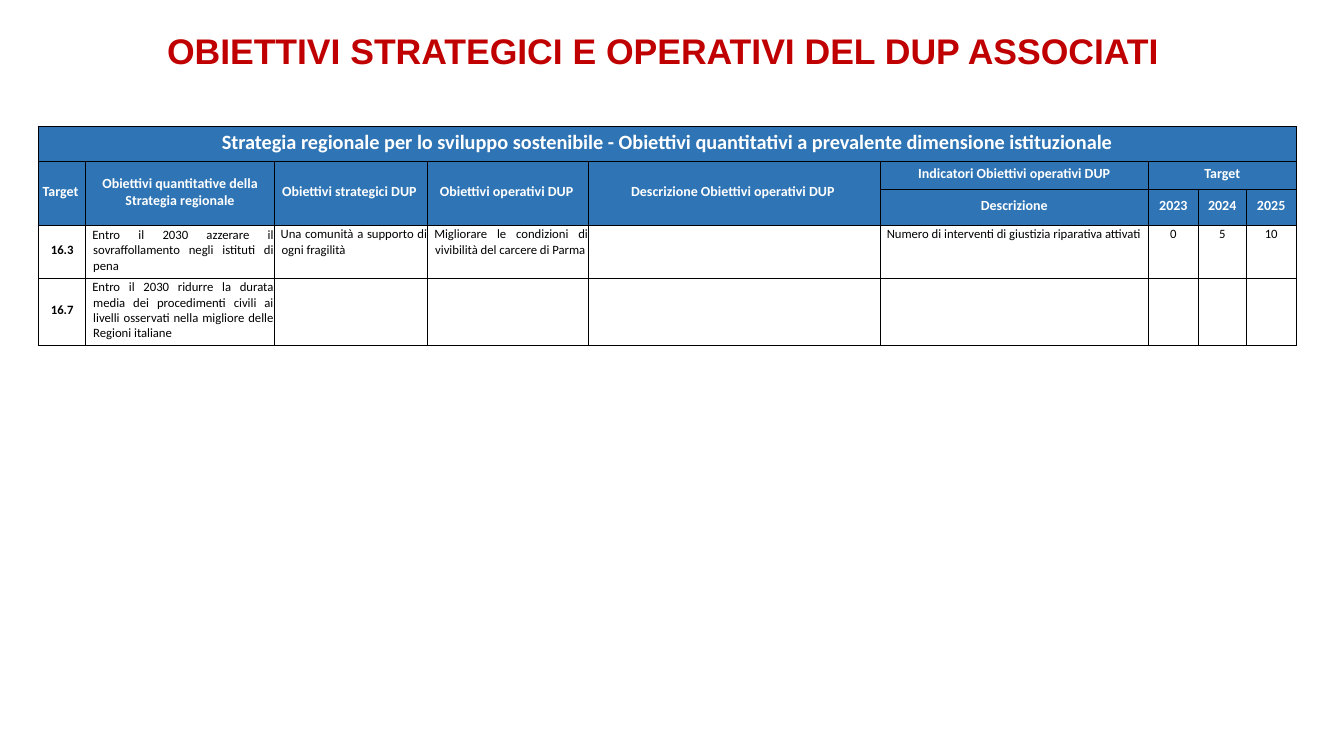
from lxml import etree
from pptx import Presentation
from pptx.dml.color import RGBColor
from pptx.enum.text import MSO_ANCHOR, PP_ALIGN
from pptx.oxml.ns import qn
from pptx.util import Inches, Pt

CENTER, JUSTIFY = PP_ALIGN.CENTER, PP_ALIGN.JUSTIFY
TOP, MIDDLE = MSO_ANCHOR.TOP, MSO_ANCHOR.MIDDLE
RED, BLUE, WHITE, BLACK = "C00000", "2F75B5", "FFFFFF", "000000"

HEADING = "OBIETTIVI STRATEGICI E OPERATIVI DEL DUP ASSOCIATI"
GOALS = [
    ["Strategia regionale per lo sviluppo sostenibile - Obiettivi quantitativi "
     "a prevalente dimensione istituzionale", "", "", "", "", "", "", "", ""],
    ["Target ", "Obiettivi quantitative della Strategia regionale",
     "Obiettivi strategici DUP ", "Obiettivi operativi DUP ",
     "Descrizione Obiettivi operativi DUP ", "Indicatori Obiettivi operativi DUP",
     "Target", "", ""],
    ["", "", "", "", "", "Descrizione", "2023", "2024", "2025"],
    ["16.3", "Entro il 2030 azzerare il sovraffollamento negli istituti di pena ",
     "Una comunità a supporto di ogni fragilità",
     "Migliorare le condizioni di vivibilità del carcere di Parma", "",
     "Numero di interventi di giustizia riparativa attivati", "0", "5", "10"],
    ["16.7", "Entro il 2030 ridurre la durata media dei procedimenti civili ai livelli "
     "osservati nella migliore delle Regioni italiane", "", "", "", "", "", "", ""],
]
HEADER_ROWS = 3
FIRST_YEAR = 6
COLUMN_WIDTHS = [0.52, 2.06, 1.68, 1.76, 3.19, 2.93, 0.55, 0.52, 0.55]
ROW_HEIGHTS = [0.39, 0.3, 0.4, 0.58, 0.73]
MERGES = [(0, 0, 0, 8), (1, 6, 1, 8)] + [(1, col, 2, col) for col in range(5)]


def color(value):
    return RGBColor.from_string(value)


def style_font(font, name, size, shade, bold):
    font.name, font.size, font.bold = name, Pt(size), bold
    font.color.rgb = color(shade)


def add_borders(cell):
    properties = cell._tc.get_or_add_tcPr()
    for side in ("a:lnL", "a:lnR", "a:lnT", "a:lnB"):
        line = etree.SubElement(properties, qn(side), w=str(Pt(1)))
        fill = etree.SubElement(line, qn("a:solidFill"))
        etree.SubElement(fill, qn("a:srgbClr"), val=BLACK)


def format_cell(cell, row, col, wording):
    header = row < HEADER_ROWS
    add_borders(cell)
    cell.margin_left = cell.margin_right = cell.margin_top = Inches(0.01)
    cell.margin_bottom = Inches(0.05)
    cell.vertical_anchor = MIDDLE if header or col < 2 else TOP
    if header:
        cell.fill.solid()
        cell.fill.fore_color.rgb = color(BLUE)
    else:
        cell.fill.background()
    cell.text_frame.text = wording
    paragraph = cell.text_frame.paragraphs[0]
    size = 16 if row == 0 else 11 if header else 10
    if header or col == 0 or col >= FIRST_YEAR:
        paragraph.alignment = CENTER
    else:
        paragraph.alignment = JUSTIFY
        indents = paragraph._p.get_or_add_pPr()
        indents.set("marL", str(Inches(0.07)))
        indents.set("indent", str(Inches(-0.01)))
    paragraph.font.size = Pt(size)
    for run in paragraph.runs:
        style_font(run.font, "Calibri", size, WHITE if header else BLACK, header or col == 0)


def add_heading(slide):
    title = slide.shapes.title
    title.left, title.top = Inches(0.01), Inches(0.03)
    title.width, title.height = Inches(14.48), Inches(0.72)
    title.text_frame.text = HEADING
    title.text_frame.vertical_anchor = TOP
    paragraph = title.text_frame.paragraphs[0]
    paragraph.alignment = CENTER
    paragraph.line_spacing = 1.5
    paragraph.space_before, paragraph.space_after = Pt(0), Pt(6)
    style_font(paragraph.runs[0].font, "Arial", 28, RED, True)


def add_goals(slide):
    table = slide.shapes.add_table(
        len(ROW_HEIGHTS), len(COLUMN_WIDTHS), Inches(0.42), Inches(1.38),
        Inches(sum(COLUMN_WIDTHS)), Inches(sum(ROW_HEIGHTS))).table
    table.first_row = table.horz_banding = False
    for column, width in zip(table.columns, COLUMN_WIDTHS):
        column.width = Inches(width)
    for band, height in zip(table.rows, ROW_HEIGHTS):
        band.height = Inches(height)
    for row, wordings in enumerate(GOALS):
        for col, wording in enumerate(wordings):
            format_cell(table.cell(row, col), row, col, wording)
    for top, left, bottom, right in MERGES:
        table.cell(top, left).merge(table.cell(bottom, right))


def main():
    deck = Presentation()
    deck.slide_width, deck.slide_height = Inches(14.7), Inches(8.27)
    slide = deck.slides.add_slide(deck.slide_layouts[5])
    add_heading(slide)
    add_goals(slide)
    deck.save("out.pptx")


if __name__ == "__main__":
    main()
